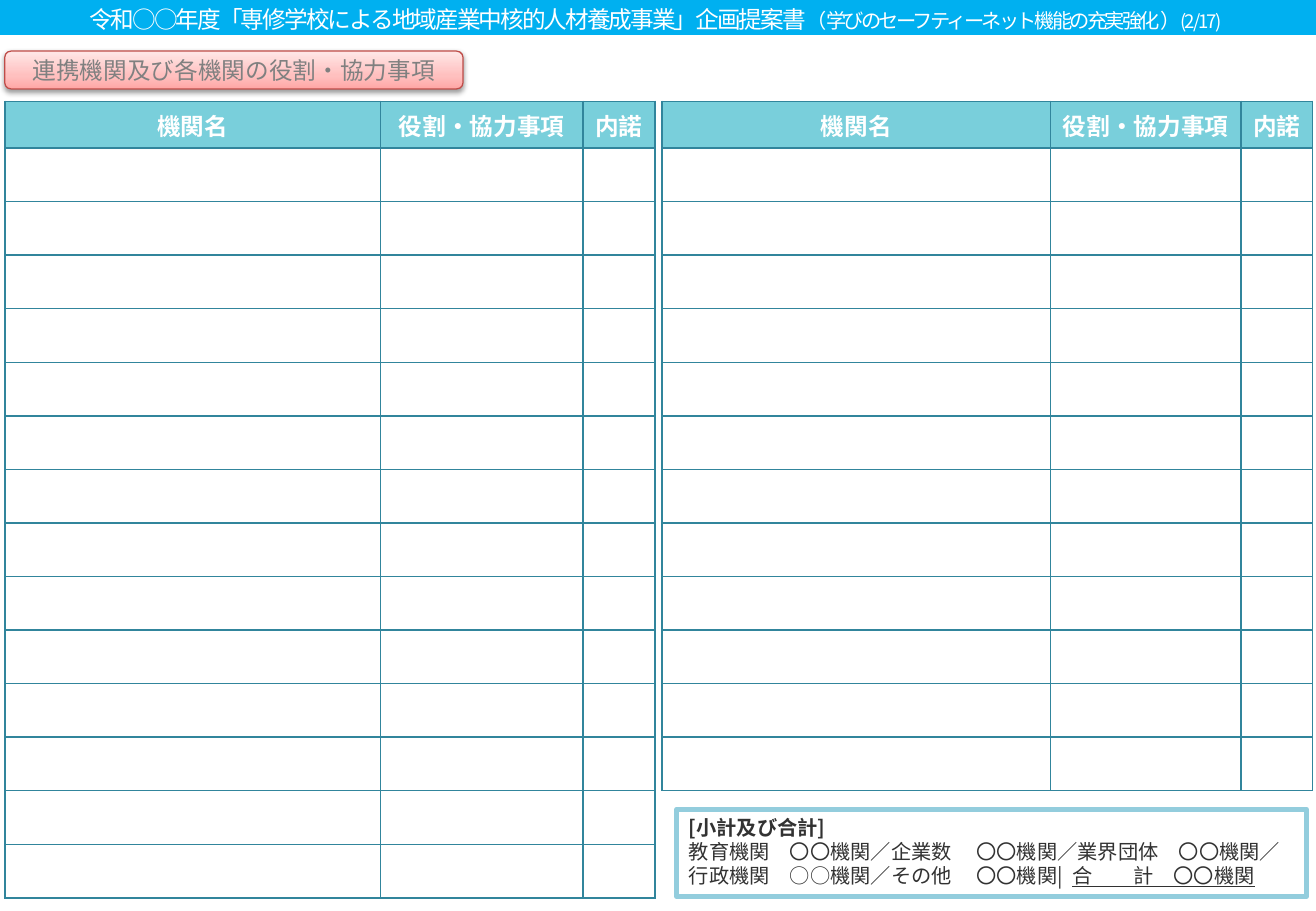
from copy import deepcopy

from lxml import etree
from pptx import Presentation, util as u
from pptx.dml.color import RGBColor
from pptx.enum import shapes, text
from pptx.oxml import parse_xml
from pptx.oxml.ns import nsdecls, qn

THEME = {
    "cjk": "Noto Sans CJK JP", "latin": "Lato",
    "white": "FFFFFF", "bar": "00B0F0", "head": "79CFDB", "grid": "31859C",
    "frame": "93CDDD", "ink": "323232", "grey": "808080", "label_line": "BF4C48",
    "label_fill": [(0, "FFA6A5"), (0.35, "FFC0BF"), (1, "FFE7E7")],
    "big": 14, "body": 12, "small": 11,
}


def rgb(name):
    return RGBColor.from_string(THEME.get(name, name))


def add_run(p, words, size, color, font="cjk", bold=False, spacing=None):
    r = p.add_run()
    r.text = words
    r.font.size, r.font.bold = u.Pt(THEME[size]), bold
    r.font.color.rgb = rgb(color)
    r.font.name = THEME[font]
    props = r.font._element
    if font == "cjk":
        etree.SubElement(props, qn("a:ea"), typeface=THEME[font])
    if spacing:
        props.set("spc", str(round(spacing * 100)))
    return r


prs = Presentation()
prs.slide_width, prs.slide_height = u.Cm(27.51), u.Cm(19.05)
s = prs.slides.add_slide(prs.slide_layouts[5])

# Summary box
sp = s.shapes.add_shape(shapes.MSO_SHAPE.RECTANGLE,
                        u.Cm(14.15), u.Cm(16.92), u.Cm(13.16), u.Cm(1.83))
sp.shadow.inherit = False
sp.fill.background()
sp.line.color.rgb, sp.line.width = rgb("frame"), u.Pt(3)
tf = sp.text_frame
tf.word_wrap, tf.vertical_anchor = True, text.MSO_ANCHOR.TOP
SUMMARY = [
    [("[小計及び合計]", True, False)],
    [("教育機関　〇〇機関／企業数　 〇〇機関／業界団体　〇〇機関／", False, False)],
    [("行政機関　○○機関／その他　 〇〇機関|  ", False, False),
     ("合　　計　〇〇機関", False, True)],
]
for i, line in enumerate(SUMMARY):
    p = tf.paragraphs[0] if i == 0 else tf.add_paragraph()
    p.alignment, p.line_spacing = text.PP_ALIGN.LEFT, u.Pt(14.4)
    for words, bold, underline in line:
        r = add_run(p, words, "body", "ink", bold=bold)
        r.font.underline = underline

# Institution tables: left edge, column widths, blank rows
HEADS = ["機関名", "役割・協力事項", "内諾"]
HEAD_H, ROW_H = 0.92, 1.12
TABLES = [(0.1, [7.85, 4.24, 1.5], 14), (13.84, [8.12, 3.98, 1.5], 12)]
for left, widths, blanks in TABLES:
    frame = s.shapes.add_table(blanks + 1, len(HEADS), u.Cm(left), u.Cm(2.12),
                               u.Cm(sum(widths)), u.Cm(HEAD_H + ROW_H * blanks))
    table = frame.table
    table.horz_banding = False
    for column, width in zip(table.columns, widths):
        column.width = u.Cm(width)
    for n, row in enumerate(table.rows):
        row.height = u.Cm(ROW_H if n else HEAD_H)
        for cell, head in zip(row.cells, HEADS):
            cell.vertical_anchor = text.MSO_ANCHOR.MIDDLE
            if n == 0:
                p = cell.text_frame.paragraphs[0]
                p.alignment = text.PP_ALIGN.CENTER
                add_run(p, head, "big", "white", font="latin", bold=True)
                cell.fill.solid()
                cell.fill.fore_color.rgb = rgb("head")
            else:
                cell.margin_top = cell.margin_bottom = 0
                cell.fill.background()
            for i, side in enumerate(("lnL", "lnR", "lnT", "lnB")):
                cell._tc.get_or_add_tcPr().insert(i, parse_xml(
                    f'<a:{side} {nsdecls("a")} w="12700"><a:solidFill>'
                    f'<a:srgbClr val="{THEME["grid"]}"/></a:solidFill></a:{side}>'))

# Header bar with the title in front of it
bar = s.shapes.add_shape(shapes.MSO_SHAPE.RECTANGLE, 0, 0, prs.slide_width, u.Cm(0.73))
bar.shadow.inherit = False
bar.fill.solid()
bar.fill.fore_color.rgb = rgb("bar")
bar.line.fill.background()

title = s.shapes.title
title.left, title.top, title.width, title.height = u.Cm(-0.1), u.Cm(-0.03), u.Cm(27.6), u.Cm(0.86)
bar._element.addnext(title._element)
tf = title.text_frame
tf.word_wrap, tf.auto_size = True, text.MSO_AUTO_SIZE.NONE
tf.vertical_anchor = text.MSO_ANCHOR.MIDDLE
p = tf.paragraphs[0]
p.alignment = text.PP_ALIGN.CENTER
for words, size, spacing in [
    ("令和○○年度「専修学校による地域産業中核的人材養成事業」企画提案書", "big", -1.2),
    ("（", "body", -1.2),
    ("学びのセーフティーネット機能の充実強化", "body", -1.6),
    ("）", "body", -1.2),
    ("(2/17)", "small", -1.2),
]:
    add_run(p, words, size, "white", spacing=spacing)

# Section label with gradient and soft shadow
label = s.shapes.add_shape(shapes.MSO_SHAPE.ROUNDED_RECTANGLE,
                           u.Cm(0.1), u.Cm(1.07), u.Cm(9.58), u.Cm(0.79))
label.fill.gradient()
label.fill.gradient_angle = 90
stops = label._element.spPr.find(".//" + qn("a:gsLst"))
stops.insert(1, deepcopy(stops[0]))
for stop, (position, color) in zip(label.fill.gradient_stops, THEME["label_fill"]):
    stop.position, stop.color.rgb = position, rgb(color)
label.line.color.rgb, label.line.width = rgb("label_line"), u.Pt(0.75)
label._element.spPr.append(parse_xml(
    f'<a:effectLst {nsdecls("a")}><a:outerShdw blurRad="{u.Pt(3.1)}" dist="{u.Pt(1.6)}" '
    'dir="5400000" rotWithShape="0"><a:srgbClr val="000000"><a:alpha val="38000"/>'
    '</a:srgbClr></a:outerShdw></a:effectLst>'))
tf = label.text_frame
tf.word_wrap, tf.vertical_anchor = True, text.MSO_ANCHOR.MIDDLE
tf.margin_top = tf.margin_bottom = 0
p = tf.paragraphs[0]
p.alignment = text.PP_ALIGN.CENTER
add_run(p, "連携機関及び各機関の役割・協力事項", "big", "grey")

prs.save("out.pptx")
